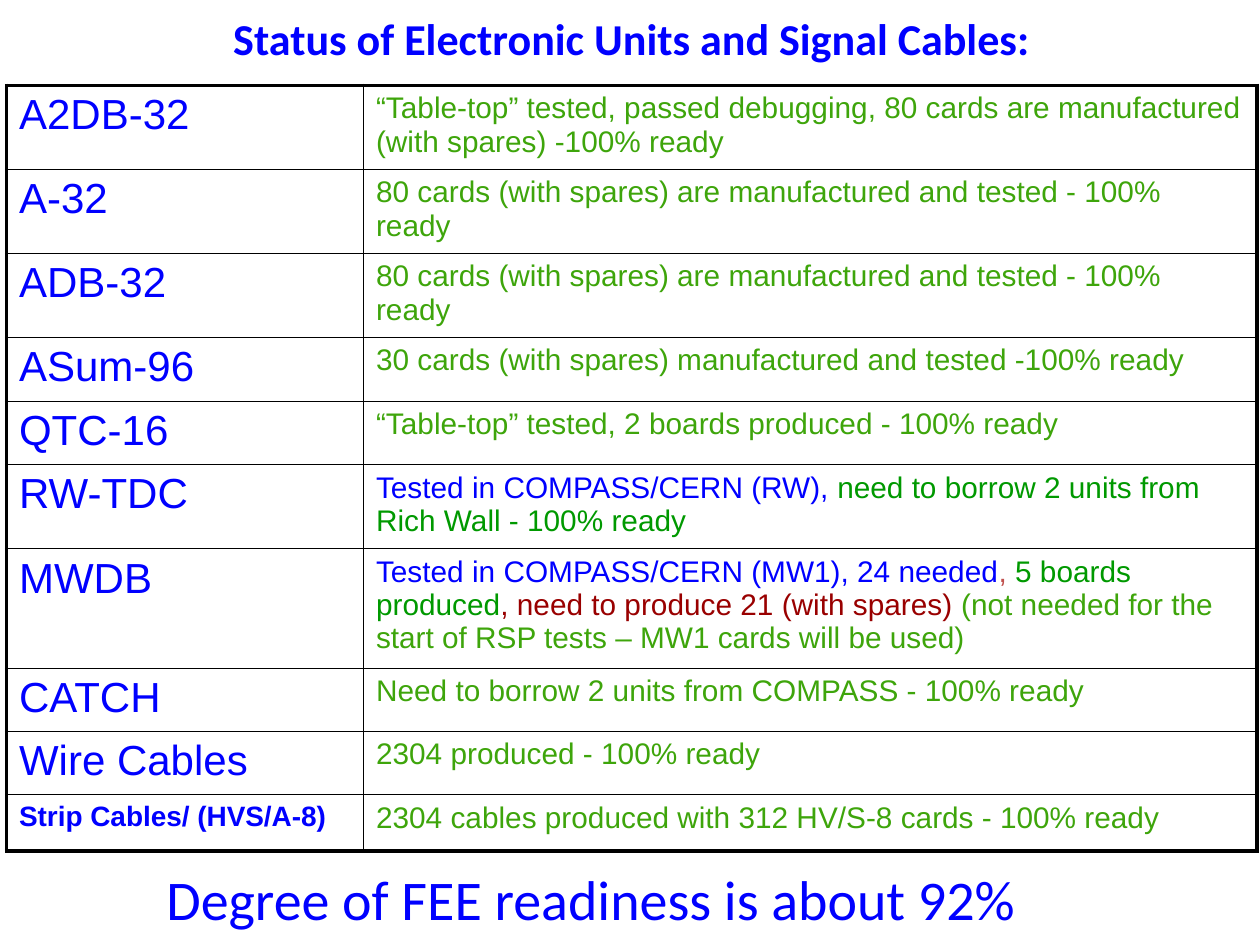
from lxml.etree import SubElement
from pptx import Presentation
from pptx.dml.color import RGBColor
from pptx.enum.text import MSO_ANCHOR as Anchor, PP_ALIGN as Align
from pptx.oxml.ns import qn
from pptx.util import Pt

COLORS = {
    "blue": "0000FF",
    "lime": "3EA50B",
    "green": "009900",
    "red": "C0504D",
    "maroon": "990000",
    "line": "000000",
}
THIN, THICK = 1, 2.25
COLUMN_WIDTHS = (204, 510.5)

CARDS_READY = "80 cards (with spares) are manufactured and tested - 100% ready"
# Unit, row height, status as (text, colour) pieces
UNITS = [
    ("A2DB-32", 45.6, [("“Table-top” tested, passed debugging, 80 cards are manufactured "
                        "(with spares) -100% ready", "lime")]),
    ("A-32", 45.6, [(CARDS_READY, "lime")]),
    ("ADB-32", 45.6, [(CARDS_READY, "lime")]),
    ("ASum-96", 36.6, [("30 cards (with spares) manufactured and tested -100% ready", "lime")]),
    ("QTC-16", 35.4, [("“Table-top” tested, 2 boards produced - 100% ready", "lime")]),
    ("RW-TDC", 45.6, [("Tested in COMPASS/CERN (RW), ", "blue"),
                      ("need to borrow 2 units from Rich Wall - 100% ready", "green")]),
    ("MWDB", 64.6, [("Tested in COMPASS/CERN (MW1), 24 needed", "blue"),
                    (", ", "red"),
                    ("5 boards produced", "green"),
                    (", need to produce 21 (with spares) ", "maroon"),
                    ("(not needed for the start of RSP tests – "
                     "MW1 cards will be used)", "lime")]),
    ("CATCH", 35.4, [("Need to borrow 2 units from COMPASS - 100% ready", "lime")]),
    ("Wire Cables", 34, [("2304 produced - 100% ready", "lime")]),
    ("Strip Cables/ (HVS/A-8)", 32.2,
     [("2304 cables produced with 312 HV/S-8 cards - 100% ready", "lime")]),
]


def write_pieces(paragraph, pieces, size, font="Arial", bold=False):
    for text, color in pieces:
        run = paragraph.add_run()
        run.text = text
        run.font.name = font
        run.font.size = Pt(size)
        run.font.bold = bold
        run.font.color.rgb = RGBColor.from_string(COLORS[color])


def add_line_of_text(slide, box, text, size, align, anchor, bold=False):
    frame = slide.shapes.add_textbox(*map(Pt, box)).text_frame
    frame.word_wrap = True
    frame.vertical_anchor = anchor
    paragraph = frame.paragraphs[0]
    paragraph.alignment = align
    write_pieces(paragraph, [(text, "blue")], size, "Calibri", bold)


def set_borders(cell, left, right, top, bottom):
    properties = cell._tc.get_or_add_tcPr()
    for side, width in zip("LRTB", (left, right, top, bottom)):
        border = SubElement(properties, qn(f"a:ln{side}"), w=str(Pt(width)))
        fill = SubElement(border, qn("a:solidFill"))
        SubElement(fill, qn("a:srgbClr"), val=COLORS["line"])


def add_status_table(slide, left, top):
    box = (left, top, sum(COLUMN_WIDTHS), sum(height for _, height, _ in UNITS))
    table = slide.shapes.add_table(len(UNITS), len(COLUMN_WIDTHS), *map(Pt, box)).table
    table.first_row = table.horz_banding = False
    for column, width in zip(table.columns, COLUMN_WIDTHS):
        column.width = Pt(width)

    last = len(UNITS) - 1
    for index, (unit, height, status) in enumerate(UNITS):
        table.rows[index].height = Pt(height)
        upper = THICK if index == 0 else THIN
        lower = THICK if index == last else THIN
        unit_cell, status_cell = table.cell(index, 0), table.cell(index, 1)
        set_borders(unit_cell, THICK, THIN, upper, lower)
        set_borders(status_cell, THIN, THICK, upper, lower)
        for cell in (unit_cell, status_cell):
            cell.fill.background()
        is_cable_row = index == last
        write_pieces(unit_cell.text_frame.paragraphs[0], [(unit, "blue")],
                     16 if is_cable_row else 24, bold=is_cable_row)
        write_pieces(status_cell.text_frame.paragraphs[0], status, 17)


def main():
    presentation = Presentation()
    presentation.slide_width, presentation.slide_height = Pt(720), Pt(540)
    slide = presentation.slides.add_slide(presentation.slide_layouts[6])
    add_line_of_text(slide, (37, 2, 648, 39), "Status of Electronic Units and Signal Cables:",
                     25.2, Align.CENTER, Anchor.MIDDLE, bold=True)
    add_status_table(slide, 3.7, 48.75)
    add_line_of_text(slide, (88, 490.5, 516, 46), "Degree of FEE readiness is about 92%",
                     32, Align.JUSTIFY, Anchor.TOP)
    presentation.save("out.pptx")


if __name__ == "__main__":
    main()
